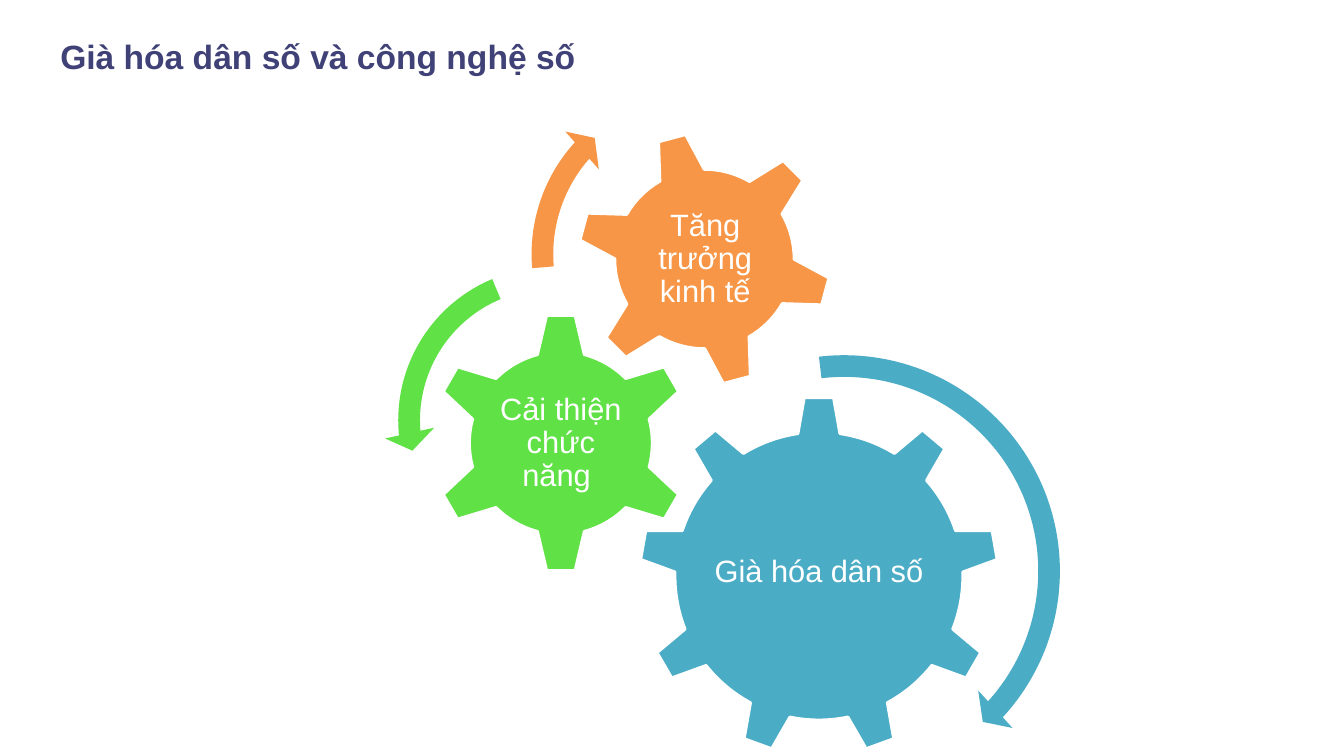
from pptx import Presentation
from pptx.dml.color import RGBColor
from pptx.enum import shapes, text
from pptx.util import Pt


def paint(fill, color):
    fill.solid()
    fill.fore_color.rgb = RGBColor.from_string(color)


def add_text(content, box, size=22, color="FFFFFF", bold=False,
             align=text.PP_ALIGN.CENTER, spacing=0.9, insets=(2.2, 2.2)):
    frame = slide.shapes.add_textbox(*map(Pt, box)).text_frame
    frame.word_wrap = True
    frame.vertical_anchor = text.MSO_ANCHOR.MIDDLE
    frame.margin_left = frame.margin_right = Pt(insets[0])
    frame.margin_top = frame.margin_bottom = Pt(insets[1])
    paragraph = frame.paragraphs[0]
    paragraph.alignment = align
    paragraph.line_spacing = spacing
    run = paragraph.add_run()
    run.text = content
    run.font.name = "Arial"
    run.font.size = Pt(size)
    run.font.bold = bold
    run.font.color.rgb = RGBColor.from_string(color)


presentation = Presentation()
presentation.slide_width = Pt(960)
presentation.slide_height = Pt(540)
slide = presentation.slides.add_slide(presentation.slide_layouts[6])

add_text("Già hóa dân số và công nghệ số", (36, 16.6, 728, 47.5), size=24,
         color="404176", bold=True, align=text.PP_ALIGN.LEFT, spacing=1,
         insets=(7.2, 3.6))

BLUE, GREEN, ORANGE = "4BACC6", "60E146", "F79646"
KIND = shapes.MSO_SHAPE

gears = [
    (KIND.GEAR_9, BLUE, (456.5, 283, 257), 0,
     "Già hóa dân số", (508.3, 343.4, 153.4, 131.8)),
    (KIND.GEAR_6, GREEN, (307.4, 223.2, 186.5), 0,
     "Cải thiện chức năng ", (354.2, 270.7, 92.9, 92.2)),
    (KIND.GEAR_6, ORANGE, (411.8, 93.6, 182.9), -15,
     "Tăng trưởng kinh tế", (452.2, 133.9, 103, 103)),
]
for kind, color, (left, top, side), rotation, label, label_box in gears:
    gear = slide.shapes.add_shape(kind, Pt(left), Pt(top), Pt(side), Pt(side))
    gear.shadow.inherit = False
    gear.rotation = rotation
    paint(gear.fill, color)
    paint(gear.line.fill, "FFFFFF")
    gear.line.width = Pt(2)
    add_text(label, label_box)

arrows = [
    (KIND.CIRCULAR_ARROW, BLUE, (438.5, 243.4, 329),
     (0.047, 2.99, 25.46, 157.98, 0.055)),
    (KIND.LEFT_CIRCULAR_ARROW, GREEN, (274.3, 180.7, 239),
     (0.065, 4.3, 104.89, 148.38, 0.075)),
    (KIND.CIRCULAR_ARROW, ORANGE, (369.4, 52.6, 257.8),
     (0.06, 3.94, 133.14, 105.08, 0.07)),
]
for kind, color, (left, top, side), adjustments in arrows:
    arrow = slide.shapes.add_shape(kind, Pt(left), Pt(top), Pt(side), Pt(side))
    arrow.shadow.inherit = False
    paint(arrow.fill, color)
    arrow.line.fill.background()
    for index, value in enumerate(adjustments):
        arrow.adjustments[index] = value

presentation.save("out.pptx")
